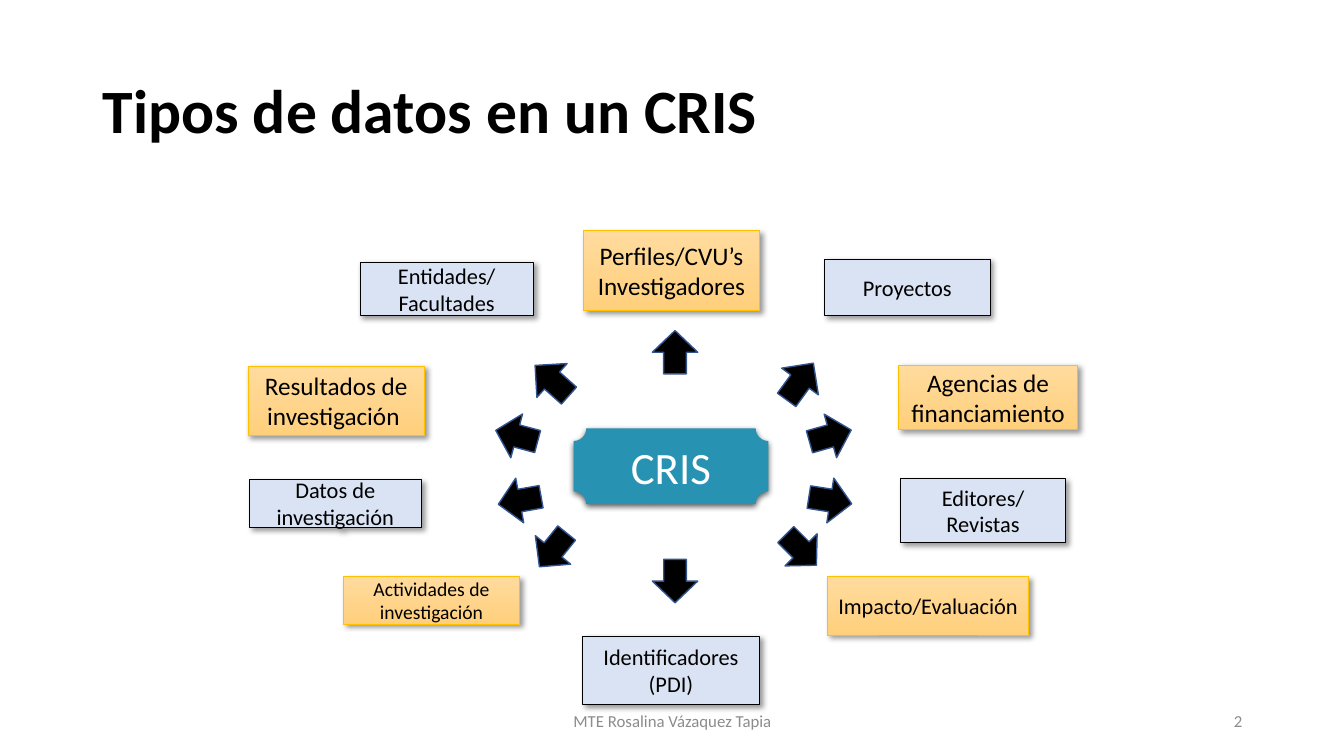
from lxml.etree import SubElement
from pptx import Presentation
from pptx.dml.color import RGBColor
from pptx.enum.shapes import MSO_SHAPE
from pptx.enum.text import MSO_ANCHOR, MSO_AUTO_SIZE, PP_ALIGN
from pptx.oxml.ns import qn
from pptx.util import Pt

PX = 9144  # 100 px to the inch
FONT = "Calibri"
BLACK, WHITE, GREY = "000000", "FFFFFF", "8C8C8C"
TEAL, PALE_BLUE, ARROW_EDGE = "2792B2", "DAE3F3", "325491"
AMBER_TOP, AMBER_BOTTOM, AMBER_EDGE = "FFDB9E", "FFD07C", "FFC000"

TITLE = "Tipos de datos en un CRIS"
TITLE_PLACE = (92, 40, 1150, 145)
HUB = ("CRIS", (569, 425, 193, 75), 32)

# text, (left, top, width, height), text size
AMBER_BOXES = [
    ("Perfiles/CVU’s\nInvestigadores", (579, 229, 174, 79), 18),
    ("Agencias de financiamiento", (891, 362, 178, 64), 18),
    ("Impacto/Evaluación", (821, 572, 199, 58), 16),
    ("Resultados de investigación ", (246, 363, 175, 69), 18),
    ("Actividades de investigación", (341, 572, 174, 47), 14),
]
BLUE_BOXES = [
    ("Proyectos", (818, 257, 164, 56), 16),
    ("Editores/\nRevistas", (893, 475, 164, 63), 16),
    ("Identificadores (PDI)", (578, 631, 175, 68), 16),
    ("Entidades/\nFacultades", (357, 260, 172, 53), 16),
    ("Datos de investigación", (247, 476, 171, 47), 16),
]
# left, top, height, rotation
ARROW_WIDTH = 45
ARROWS = [
    (647, 328, 43, 0), (771, 356, 45, 36), (801, 411, 43, 74.1),
    (801, 475, 43, 98.9), (772, 524, 43, 135), (647, 555, 43, 180),
    (526, 524, 43, 218.9), (493, 475, 43, 259.9), (490, 411, 43, 285),
    (525, 355, 45, 311.7),
]
FOOTERS = [
    ("MTE Rosalina Vázaquez Tapia", (442, 695, 450, 40), PP_ALIGN.CENTER),
    ("2", (942, 695, 300, 40), PP_ALIGN.RIGHT),
]


def color(code):
    return RGBColor.from_string(code)


def scaled(place):
    return [length * PX for length in place]


def write(shape, text, size, ink, align=PP_ALIGN.CENTER, bold=False):
    frame = shape.text_frame
    frame.text = text
    frame.word_wrap = True
    frame.auto_size = MSO_AUTO_SIZE.NONE
    frame.vertical_anchor = MSO_ANCHOR.MIDDLE
    for para in frame.paragraphs:
        para.alignment = align
        for span in para.runs:
            span.font.name = FONT
            span.font.size = Pt(size)
            span.font.bold = bold
            span.font.color.rgb = color(ink)


def add_figure(page, preset, place, fill=None, edge=None, edge_width=0.5):
    """Add a preset shape without shadow; no fill code means the amber gradient."""
    shape = page.shapes.add_shape(preset, *scaled(place))
    shape.shadow.inherit = False
    if fill:
        shape.fill.solid()
        shape.fill.fore_color.rgb = color(fill)
    else:
        shape.fill.gradient()
        shape.fill.gradient_angle = 270
        for stop, code in zip(shape.fill.gradient_stops, (AMBER_TOP, AMBER_BOTTOM)):
            stop.color.rgb = color(code)
    if edge:
        shape.line.color.rgb = color(edge)
        shape.line.width = Pt(edge_width)
    else:
        shape.line.fill.background()
    return shape


def cast_shadow(shape, opacity, blur, distance, angle):
    effects = shape._element.spPr.find(qn("a:effectLst"))
    shadow = SubElement(effects, qn("a:outerShdw"), blurRad=str(Pt(blur)),
                        dist=str(Pt(distance)), dir=str(angle * 60000),
                        algn="tl", rotWithShape="0")
    tint = SubElement(shadow, qn("a:srgbClr"), val=BLACK)
    SubElement(tint, qn("a:alpha"), val=str(opacity * 1000))


def main():
    deck = Presentation()
    deck.slide_width, deck.slide_height = 1333 * PX, 750 * PX
    page = deck.slides.add_slide(deck.slide_layouts[5])

    title = page.shapes.title
    title.left, title.top, title.width, title.height = scaled(TITLE_PLACE)
    write(title, TITLE, 44, BLACK, PP_ALIGN.LEFT, bold=True)
    title.text_frame.paragraphs[0].line_spacing = 0.9

    text, place, size = HUB
    hub = add_figure(page, MSO_SHAPE.PLAQUE, place, TEAL)
    cast_shadow(hub, 63, 4.5, 1.5, 90)
    write(hub, text, size, WHITE)

    for boxes, fill, edge in ((AMBER_BOXES, None, AMBER_EDGE),
                              (BLUE_BOXES, PALE_BLUE, BLACK)):
        for text, place, size in boxes:
            box = add_figure(page, MSO_SHAPE.RECTANGLE, place, fill, edge)
            cast_shadow(box, 40, 4, 3, 45)
            write(box, text, size, BLACK)

    for left, top, height, rotation in ARROWS:
        arrow = add_figure(page, MSO_SHAPE.UP_ARROW, (left, top, ARROW_WIDTH, height),
                           BLACK, ARROW_EDGE, 1)
        arrow.rotation = rotation

    for text, place, align in FOOTERS:
        write(page.shapes.add_textbox(*scaled(place)), text, 12, GREY, align)

    deck.save("out.pptx")


if __name__ == "__main__":
    main()
